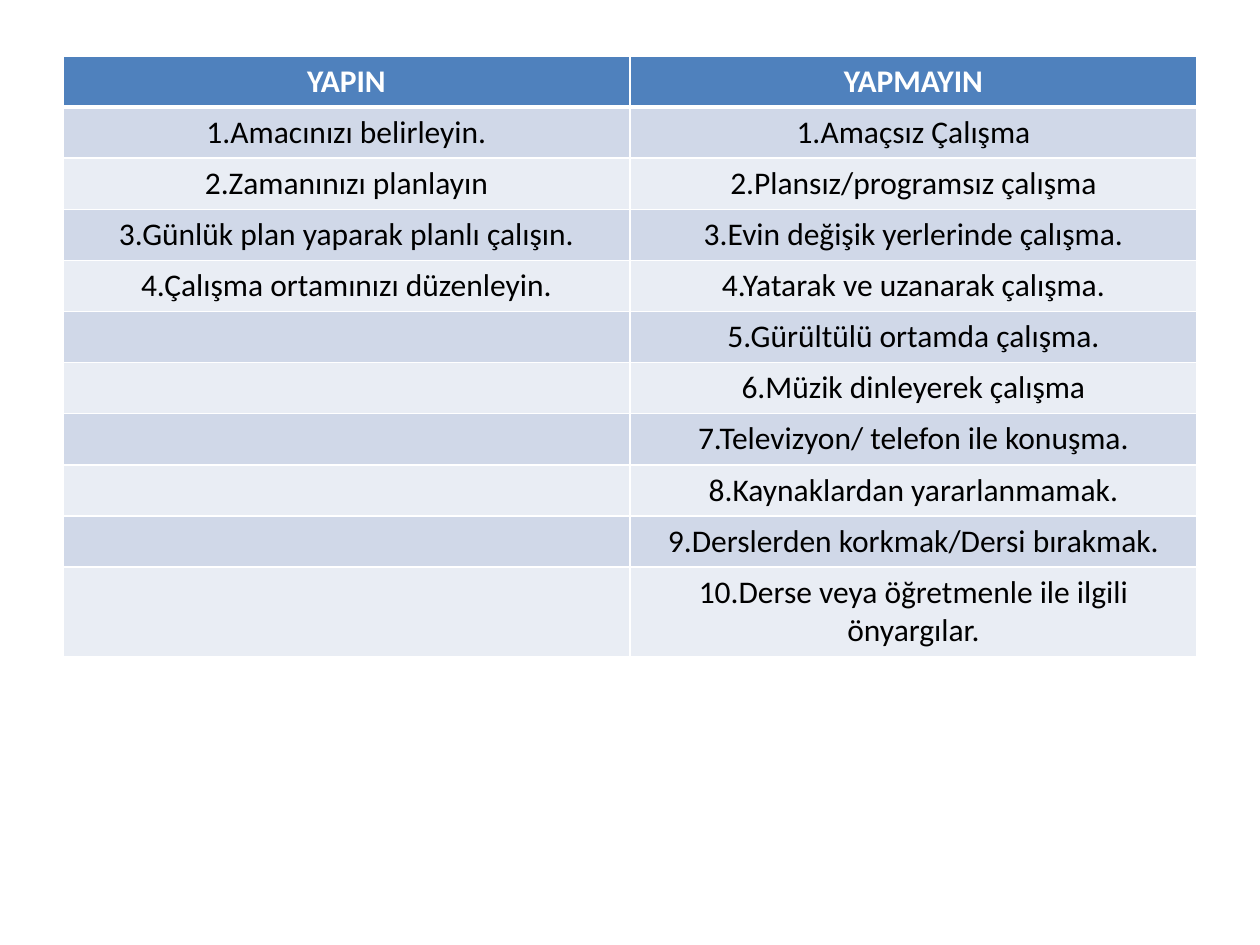
from dataclasses import dataclass
from itertools import zip_longest

from lxml import etree
from pptx import Presentation
from pptx.dml.color import RGBColor
from pptx.enum.text import PP_ALIGN
from pptx.oxml.ns import qn
from pptx.util import Pt

CENTER = PP_ALIGN.CENTER
BLANK_LAYOUT = 6


@dataclass(frozen=True)
class Theme:
    font: str = "Calibri"
    size: int = 18
    header_fill: str = "4F81BD"
    header_text: str = "FFFFFF"
    body_fills: tuple = ("D0D8E8", "E9EDF4")
    body_text: str = "000000"
    border: str = "FFFFFF"
    thin: int = 1
    thick: int = 3


THEME = Theme()

HEADINGS = ("YAPIN", "YAPMAYIN")
DOS = (
    "1.Amacınızı belirleyin.",
    "2.Zamanınızı planlayın",
    "3.Günlük plan yaparak planlı çalışın.",
    "4.Çalışma ortamınızı düzenleyin.",
)
DONTS = (
    "1.Amaçsız Çalışma",
    "2.Plansız/programsız çalışma",
    "3.Evin değişik yerlerinde çalışma.",
    "4.Yatarak ve uzanarak çalışma.",
    "5.Gürültülü ortamda çalışma.",
    "6.Müzik dinleyerek çalışma",
    "7.Televizyon/ telefon ile konuşma.",
    "8.Kaynaklardan yararlanmamak.",
    "9.Derslerden korkmak/Dersi bırakmak.",
    "10.Derse veya öğretmenle ile ilgili önyargılar.",
)


def set_borders(cell, top, bottom):
    """Draw the four cell borders; the side borders are thin."""
    properties = cell._tc.get_or_add_tcPr()
    widths = {"lnL": THEME.thin, "lnR": THEME.thin, "lnT": top, "lnB": bottom}
    for tag, width in widths.items():
        line = etree.SubElement(properties, qn(f"a:{tag}"), w=str(Pt(width)))
        fill = etree.SubElement(line, qn("a:solidFill"))
        etree.SubElement(fill, qn("a:srgbClr"), val=THEME.border)


def format_cell(cell, text, row):
    """Fill one cell; row 0 is the header and the body rows are banded."""
    header = row == 0
    set_borders(
        cell,
        top=THEME.thick if row == 1 else THEME.thin,
        bottom=THEME.thick if header else THEME.thin,
    )
    fill = THEME.header_fill if header else THEME.body_fills[(row - 1) % 2]
    cell.fill.solid()
    cell.fill.fore_color.rgb = RGBColor.from_string(fill)

    para = cell.text_frame.paragraphs[0]
    para.alignment = CENTER
    para.font.size = Pt(THEME.size)
    if text:
        span = para.add_run()
        span.text = text
        span.font.name = THEME.font
        span.font.size = Pt(THEME.size)
        span.font.bold = header
        color = THEME.header_text if header else THEME.body_text
        span.font.color.rgb = RGBColor.from_string(color)


def add_advice_table(page, left, top, width, row_height):
    """Place the two-column table of study habits."""
    rows = [HEADINGS, *zip_longest(DOS, DONTS, fillvalue="")]
    table = page.shapes.add_table(
        len(rows), len(HEADINGS),
        Pt(left), Pt(top), Pt(width), Pt(row_height * len(rows)),
    ).table
    for column in table.columns:
        column.width = Pt(width / len(HEADINGS))
    for row, texts in enumerate(rows):
        table.rows[row].height = Pt(row_height)
        for column, text in enumerate(texts):
            format_cell(table.cell(row, column), text, row)


def main():
    deck = Presentation()
    deck.slide_width, deck.slide_height = Pt(720), Pt(540)
    page = deck.slides.add_slide(deck.slide_layouts[BLANK_LAYOUT])
    add_advice_table(page, left=36, top=32, width=648, row_height=29.2)
    deck.save("out.pptx")


if __name__ == "__main__":
    main()
